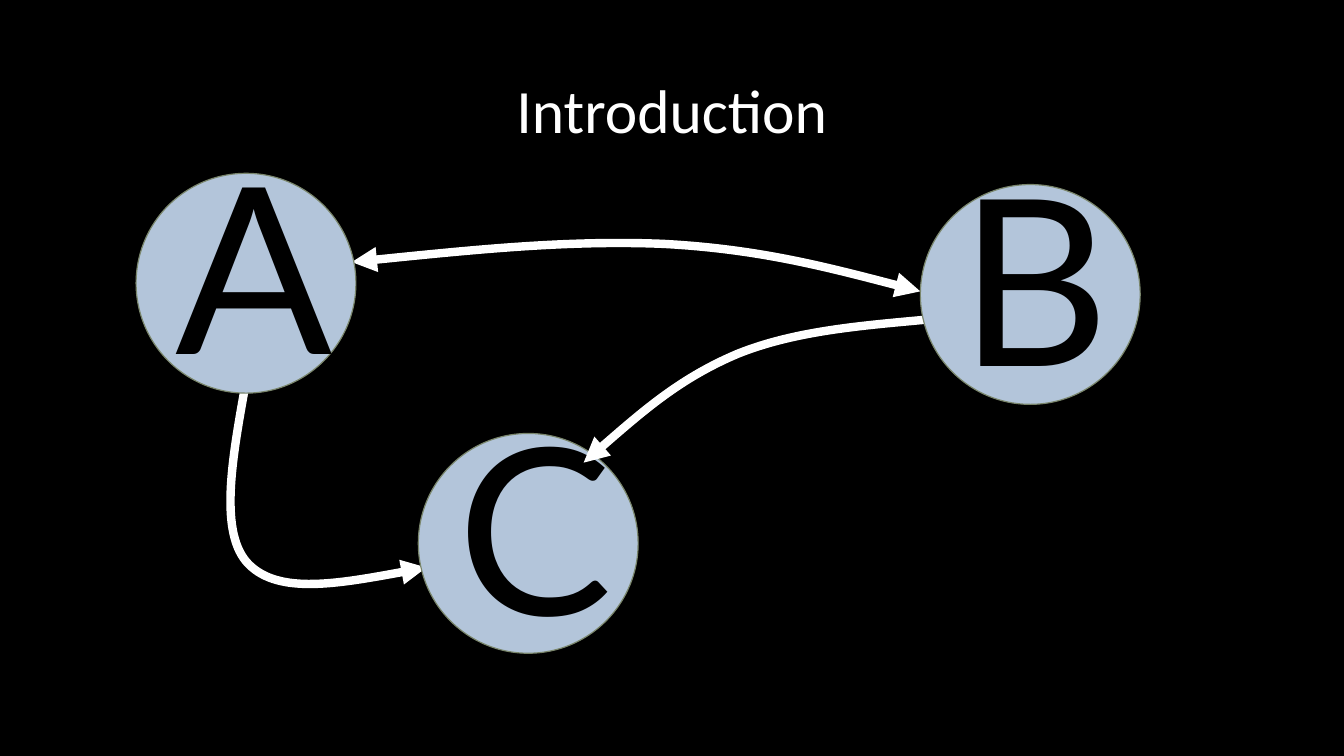
from pptx import Presentation
from pptx.dml.color import RGBColor
from pptx.enum.shapes import MSO_SHAPE
from pptx.enum.text import MSO_ANCHOR, MSO_AUTO_SIZE, PP_ALIGN
from pptx.oxml.ns import qn
from pptx.util import Pt
from lxml.etree import SubElement

SIDE = 157
NODES = {"A": (97.2, 123.8), "B": (657.4, 131.8), "C": (298.8, 309.6)}
CURVES = {
    "AC": ((175, 276.5), [(-9.4, 52.5), (-18.8, 105.1), (2.8, 126.7),
                          (24.4, 148.3), (77, 138.9), (129.6, 128.9)]),
    "AB": ((251.3, 187.2), [(77.7, -7.9), (154.8, -15.8), (222.5, -13),
                            (290.1, -9.4), (348.5, 5.8), (406.1, 20.9)]),
    "BC": ((663.1, 228.2), [(-47.5, 4.4), (-95, 8), (-136.1, 24.5),
                            (-177.1, 41.8), (-211.7, 72), (-246.2, 102.3)]),
}


def color(code):
    return RGBColor.from_string(code)


def style(para, face, size, code):
    para.alignment = PP_ALIGN.CENTER
    para.font.name = face
    para.font.size = Pt(size)
    para.font.color.rgb = color(code)


def add_title(slide, text, left, top, width, height):
    title = slide.shapes.title
    title.left, title.top = Pt(left), Pt(top)
    title.width, title.height = Pt(width), Pt(height)
    frame = title.text_frame
    frame.text = text
    frame.vertical_anchor = MSO_ANCHOR.MIDDLE
    para = frame.paragraphs[0]
    para.line_spacing = 0.9
    style(para, "Calibri", 44, "FFFFFF")


def add_node(slide, name):
    left, top = NODES[name]
    shapes = slide.shapes.add_group_shape().shapes
    disc = shapes.add_shape(MSO_SHAPE.OVAL, Pt(left), Pt(top), Pt(SIDE), Pt(SIDE))
    disc.shadow.inherit = False
    disc.fill.solid()
    disc.fill.fore_color.rgb = color("B3C5DA")
    disc.line.color.rgb = color("7A866C")
    disc.line.width = Pt(0.85)
    label = shapes.add_textbox(Pt(left + 20.9), Pt(top - 39.8), Pt(108.7), Pt(208))
    frame = label.text_frame
    frame.word_wrap = True
    frame.auto_size = MSO_AUTO_SIZE.SHAPE_TO_FIT_TEXT
    frame.text = name
    style(frame.paragraphs[0], "Lato", 166, "000000")


def add_curve(slide, name, ends):
    (left, top), steps = CURVES[name]
    pen = slide.shapes.build_freeform(Pt(left), Pt(top))
    pen.add_line_segments([(Pt(left + x), Pt(top + y)) for x, y in steps], close=False)
    curve = pen.convert_to_shape()
    curve.shadow.inherit = False
    curve.fill.background()
    curve.line.color.rgb = color("FFFFFF")
    curve.line.width = Pt(6)
    props = curve.element.spPr
    track = props.find(".//" + qn("a:path"))
    lines = track.findall(qn("a:lnTo"))
    for start in range(0, len(lines), 3):
        bend = SubElement(track, qn("a:cubicBezTo"))
        for line in lines[start:start + 3]:
            bend.append(line[0])
            track.remove(line)
    for end in ends:
        SubElement(props.find(qn("a:ln")), qn("a:" + end), type="triangle")


def main():
    deck = Presentation()
    deck.slide_width, deck.slide_height = Pt(960), Pt(540)
    slide = deck.slides.add_slide(deck.slide_layouts[5])
    slide.background.fill.solid()
    slide.background.fill.fore_color.rgb = color("000000")
    add_title(slide, "Introduction", 66, 28.8, 828, 104.4)
    add_curve(slide, "AC", ["tailEnd"])
    add_curve(slide, "AB", ["headEnd", "tailEnd"])
    add_node(slide, "A")
    add_node(slide, "C")
    add_curve(slide, "BC", ["tailEnd"])
    add_node(slide, "B")
    deck.save("out.pptx")


if __name__ == "__main__":
    main()
